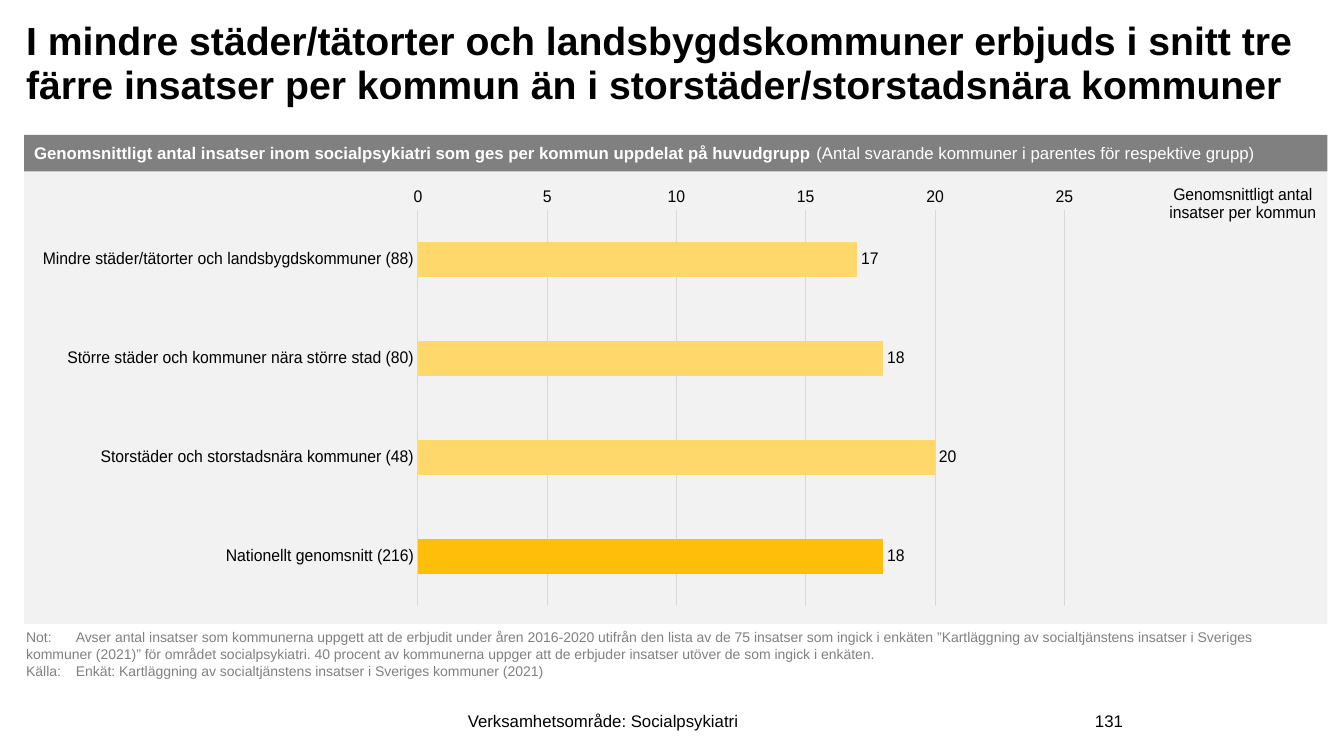
from pptx import Presentation
from pptx.chart.data import CategoryChartData
from pptx.dml.color import RGBColor
from pptx.enum.chart import XL_CHART_TYPE as ChartType, XL_LABEL_POSITION as LabelPos, XL_TICK_MARK as Tick
from pptx.enum.shapes import MSO_SHAPE as Shape
from pptx.enum.text import MSO_ANCHOR as Anchor, PP_ALIGN as Align
from pptx.oxml import parse_xml
from pptx.oxml.ns import nsdecls, qn
from pptx.util import Cm, Pt

COLORS = {
    "text": "000000", "muted": "808080", "white": "FFFFFF", "panel": "F2F2F2",
    "grid": "D9D9D9", "bar": "FFD86C", "national": "FFBE0A",
}
FONT = "Arial"
HEADER_HEIGHT = 0.92
GROUPS = {
    "Mindre städer/tätorter och landsbygdskommuner (88)": 17,
    "Större städer och kommuner nära större stad (80)": 18,
    "Storstäder och storstadsnära kommuner (48)": 20,
    "Nationellt genomsnitt (216)": 18,
}


def color(name):
    return RGBColor.from_string(COLORS[name])


def style(font, size, name="text", bold=False):
    font.name, font.size, font.bold = FONT, Pt(size), bold
    font.color.rgb = color(name)


def add_text(slide, box, text, size, name="text", bold=False, anchor=Anchor.TOP, align=Align.LEFT):
    frame = slide.shapes.add_textbox(*map(Cm, box)).text_frame
    frame.word_wrap = True
    frame.vertical_anchor = anchor
    frame.text = text
    for paragraph in frame.paragraphs:
        paragraph.alignment = align
        for run in paragraph.runs:
            style(run.font, size, name, bold)
    return frame


def add_band(slide, box, fill):
    band = slide.shapes.add_shape(Shape.RECTANGLE, *map(Cm, box))
    band.shadow.inherit = False
    band.fill.solid()
    band.fill.fore_color.rgb = color(fill)
    band.line.fill.background()
    return band


def set_layout(parent, index, **values):
    current = parent.find(qn("c:layout"))
    if current is not None:
        parent.remove(current)
    parts = "".join(f'<c:{key} val="{value}"/>' for key, value in values.items())
    parent.insert(index, parse_xml(
        f'<c:layout {nsdecls("c")}><c:manualLayout>{parts}</c:manualLayout></c:layout>'))


def add_headline(slide, box):
    headline = add_text(
        slide, box,
        "I mindre städer/tätorter och landsbygdskommuner erbjuds i snitt tre "
        "färre insatser per kommun än i storstäder/storstadsnära kommuner",
        28, bold=True, anchor=Anchor.BOTTOM)
    headline.paragraphs[0].line_spacing = 0.95


def add_header(slide, box):
    frame = add_band(slide, box, "muted").text_frame
    frame.word_wrap = True
    frame.vertical_anchor = Anchor.MIDDLE
    paragraph = frame.paragraphs[0]
    paragraph.alignment = Align.LEFT
    for text, bold in (
        ("Genomsnittligt antal insatser inom socialpsykiatri som ges per kommun uppdelat på huvudgrupp ", True),
        ("(Antal svarande kommuner i parentes för respektive grupp)", False),
    ):
        run = paragraph.add_run()
        run.text = text
        style(run.font, 12, "white", bold)


def style_axes(chart):
    groups, average = chart.category_axis, chart.value_axis
    for axis in (groups, average):
        axis.major_tick_mark = axis.minor_tick_mark = Tick.NONE
        style(axis.tick_labels.font, 12)
    groups.reverse_order = True
    average.minimum_scale, average.maximum_scale, average.major_unit = 0, 25, 5
    average.tick_labels.number_format = "0"
    average.tick_labels.number_format_is_linked = False
    average.format.line.fill.background()
    average.has_major_gridlines = True
    for line in (groups.format.line, average.major_gridlines.format.line):
        line.color.rgb = color("grid")
        line.width = Pt(0.75)
    title = average.axis_title
    title.text_frame.text = "Genomsnittligt antal\ninsatser per kommun"
    for paragraph in title.text_frame.paragraphs:
        paragraph.alignment = Align.CENTER
        for run in paragraph.runs:
            style(run.font, 12)
    set_layout(title._element, 1, xMode="edge", yMode="edge", x=0.94, y=0.02)


def add_average_chart(slide, box):
    data = CategoryChartData(number_format="0")
    data.categories = list(GROUPS)
    data.add_series("Series 1", list(GROUPS.values()))
    chart = slide.shapes.add_chart(ChartType.BAR_CLUSTERED, *map(Cm, box), data).chart
    style(chart.font, 12)
    chart.has_legend = chart.has_title = False
    style_axes(chart)
    set_layout(chart._chartSpace.chart.plotArea, 0, layoutTarget="inner",
               xMode="edge", yMode="edge", x=0.324, y=0.085, w=0.532, h=0.881)
    plot = chart.plots[0]
    plot.gap_width = 182
    plot.vary_by_categories = False
    averages = plot.series[0]
    national = averages.points[len(GROUPS) - 1]
    for part, name in ((averages, "bar"), (national, "national")):
        part.format.fill.solid()
        part.format.fill.fore_color.rgb = color(name)
    labels = averages.data_labels
    labels.show_value = True
    labels.position = LabelPos.OUTSIDE_END
    labels.number_format = "0"
    labels.number_format_is_linked = False
    style(labels.font, 12)


def add_panel(slide, left, top, width, height):
    body_top, body_height = top + HEADER_HEIGHT, height - HEADER_HEIGHT
    add_band(slide, (left, body_top, width, body_height), "panel")
    add_header(slide, (left, top, width, HEADER_HEIGHT))
    add_average_chart(slide, (left, body_top, width - 0.2, body_height - 0.07))


def add_notes(slide, box):
    notes = add_text(
        slide, box,
        "Not: \tAvser antal insatser som kommunerna uppgett att de erbjudit under åren 2016-2020 utifrån den "
        "lista av de 75 insatser som ingick i enkäten ”Kartläggning av socialtjänstens insatser i Sveriges "
        "kommuner (2021)” för området socialpsykiatri. 40 procent av kommunerna uppger att de erbjuder "
        "insatser utöver de som ingick i enkäten.\n"
        "Källa:\tEnkät: Kartläggning av socialtjänstens insatser i Sveriges kommuner (2021)",
        10, "muted")
    for paragraph in notes.paragraphs:
        paragraph._p.get_or_add_pPr().append(parse_xml(
            f'<a:tabLst {nsdecls("a")}><a:tab pos="{Cm(1.25)}" algn="l"/></a:tabLst>'))


def add_footer(slide, left, top, width, height):
    area_width, number_width = 16.74, 3.53
    add_text(slide, (left, top, area_width, height), "Verksamhetsområde: Socialpsykiatri", 12,
             anchor=Anchor.MIDDLE, align=Align.CENTER)
    add_text(slide, (left + width - number_width, top, number_width, height), "131", 12,
             anchor=Anchor.MIDDLE, align=Align.RIGHT)


def main():
    deck = Presentation()
    deck.slide_width, deck.slide_height = Cm(33.87), Cm(19.05)
    slide = deck.slides.add_slide(deck.slide_layouts[6])
    add_panel(slide, 0.61, 3.4, 32.84, 12.32)
    add_headline(slide, (0.41, 0.38, 33.02, 2.49))
    add_notes(slide, (0.41, 15.72, 32.11, 1.55))
    add_footer(slide, 6.83, 17.65, 21.72, 1.02)
    deck.save("out.pptx")


if __name__ == "__main__":
    main()
